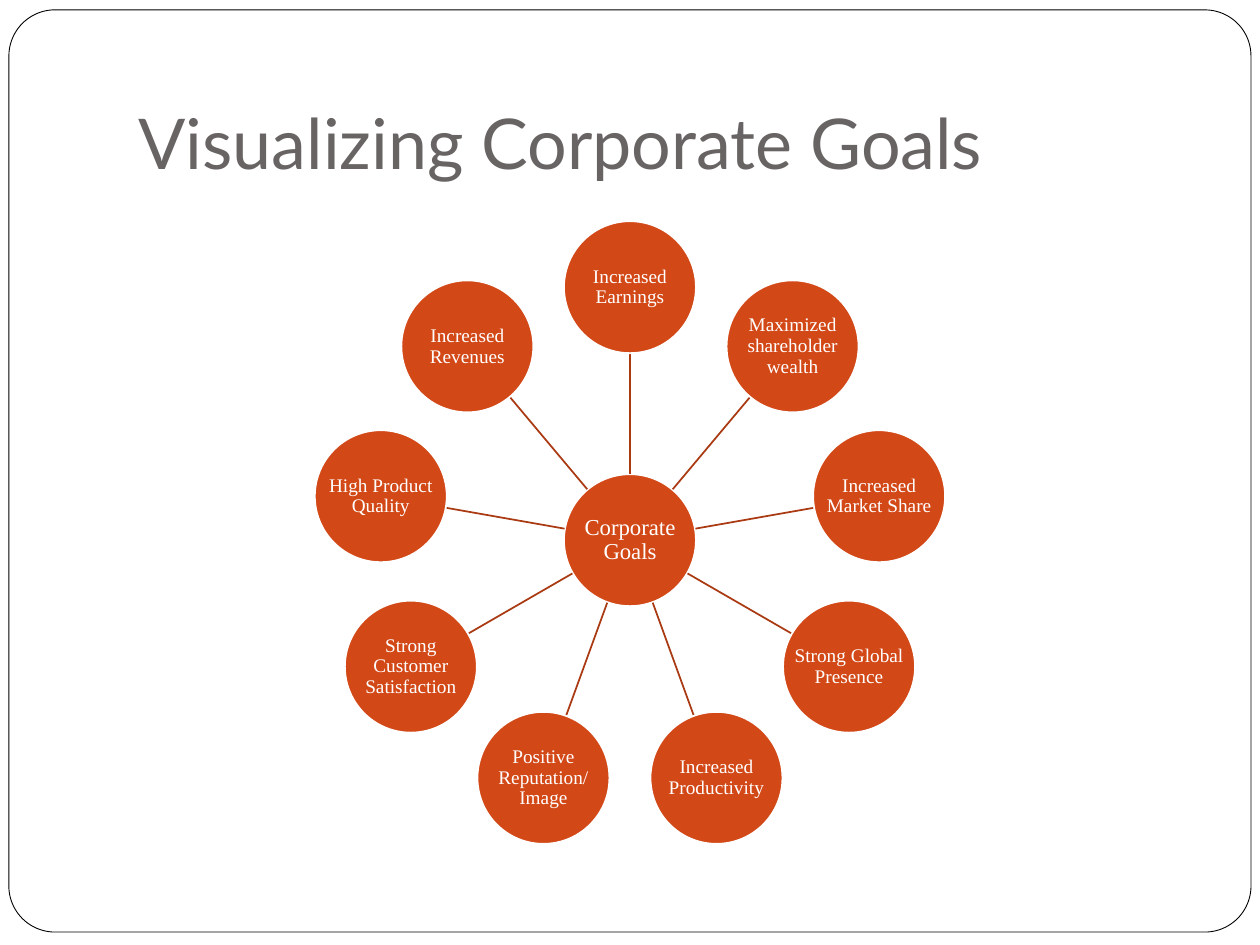
from math import cos, radians, sin

from pptx import Presentation
from pptx.dml.color import RGBColor
from pptx.enum.shapes import MSO_CONNECTOR, MSO_SHAPE
from pptx.enum.text import MSO_ANCHOR, MSO_AUTO_SIZE, PP_ALIGN
from pptx.oxml.ns import qn
from pptx.util import Cm, Pt
from lxml.etree import SubElement

WHITE = RGBColor(0xFF, 0xFF, 0xFF)
BLACK = RGBColor(0, 0, 0)
GRAY = RGBColor(0x69, 0x64, 0x64)
ORANGE = RGBColor(0xD3, 0x48, 0x17)
RUST = RGBColor(0xA9, 0x3A, 0x12)

MID_X, MID_Y = 12.7, 10.89
ORBIT = 5.1
SIZE = 2.66
INNER, OUTER = 1.34, 3.76


def write(frame, text, size, font, color, align, anchor, spacing=None, margin=0.1):
    frame.word_wrap = True
    frame.auto_size = MSO_AUTO_SIZE.NONE
    frame.vertical_anchor = anchor
    frame.margin_left = frame.margin_right = Cm(margin)
    frame.margin_top = frame.margin_bottom = Cm(margin)
    para = frame.paragraphs[0]
    para.alignment = align
    para.line_spacing = spacing
    run = para.add_run()
    run.text = text
    run.font.size = Pt(size)
    run.font.name = font
    run.font.color.rgb = color


def circle(text, x, y, size):
    box = [Cm(x - SIZE / 2), Cm(y - SIZE / 2), Cm(SIZE), Cm(SIZE)]
    disc = shapes.add_shape(MSO_SHAPE.OVAL, *box)
    disc.shadow.inherit = False
    disc.fill.solid()
    disc.fill.fore_color.rgb = ORANGE
    disc.line.color.rgb = WHITE
    disc.line.width = Pt(1)
    label = shapes.add_textbox(*box)
    write(label.text_frame, text, size=size, font="Times New Roman", color=WHITE,
          align=PP_ALIGN.CENTER, anchor=MSO_ANCHOR.MIDDLE, spacing=0.9)


deck = Presentation()
deck.slide_width, deck.slide_height = Cm(25.4), Cm(19.05)
slide = deck.slides.add_slide(deck.slide_layouts[5])
shapes = slide.shapes

border = shapes.add_shape(MSO_SHAPE.ROUNDED_RECTANGLE, Cm(0.18), Cm(0.2), Cm(25.04), Cm(18.59))
border.adjustments[0] = 0.05
border.shadow.inherit = False
border.fill.solid()
border.fill.fore_color.rgb = WHITE
border.line.color.rgb = BLACK
border.line.width = Pt(0.5)

title = shapes.title
title.left, title.top, title.width, title.height = Cm(2.54), Cm(0.76), Cm(21.59), Cm(3.18)
write(title.text_frame, "Visualizing Corporate Goals", size=40, font="Lato", color=GRAY,
      align=PP_ALIGN.LEFT, anchor=MSO_ANCHOR.BOTTOM, margin=0.25)
border.element.addnext(title.element)

goals = [
    "Increased Earnings",
    "Maximized shareholder wealth",
    "Increased Market Share",
    "Strong Global Presence",
    "Increased Productivity",
    "Positive Reputation/ Image",
    "Strong Customer Satisfaction",
    "High Product Quality",
    "Increased Revenues",
]

circle("Corporate Goals", MID_X, MID_Y, size=13)
for i, goal in enumerate(goals):
    angle = radians(360 / len(goals) * i - 90)
    dx, dy = cos(angle), sin(angle)
    spoke = shapes.add_connector(
        MSO_CONNECTOR.STRAIGHT,
        Cm(MID_X + INNER * dx), Cm(MID_Y + INNER * dy),
        Cm(MID_X + OUTER * dx), Cm(MID_Y + OUTER * dy))
    spoke.line.color.rgb = RUST
    spoke.line.width = Pt(1)
    SubElement(spoke.element.spPr, qn("a:effectLst"))
    circle(goal, MID_X + ORBIT * dx, MID_Y + ORBIT * dy, size=11)

deck.save("out.pptx")
